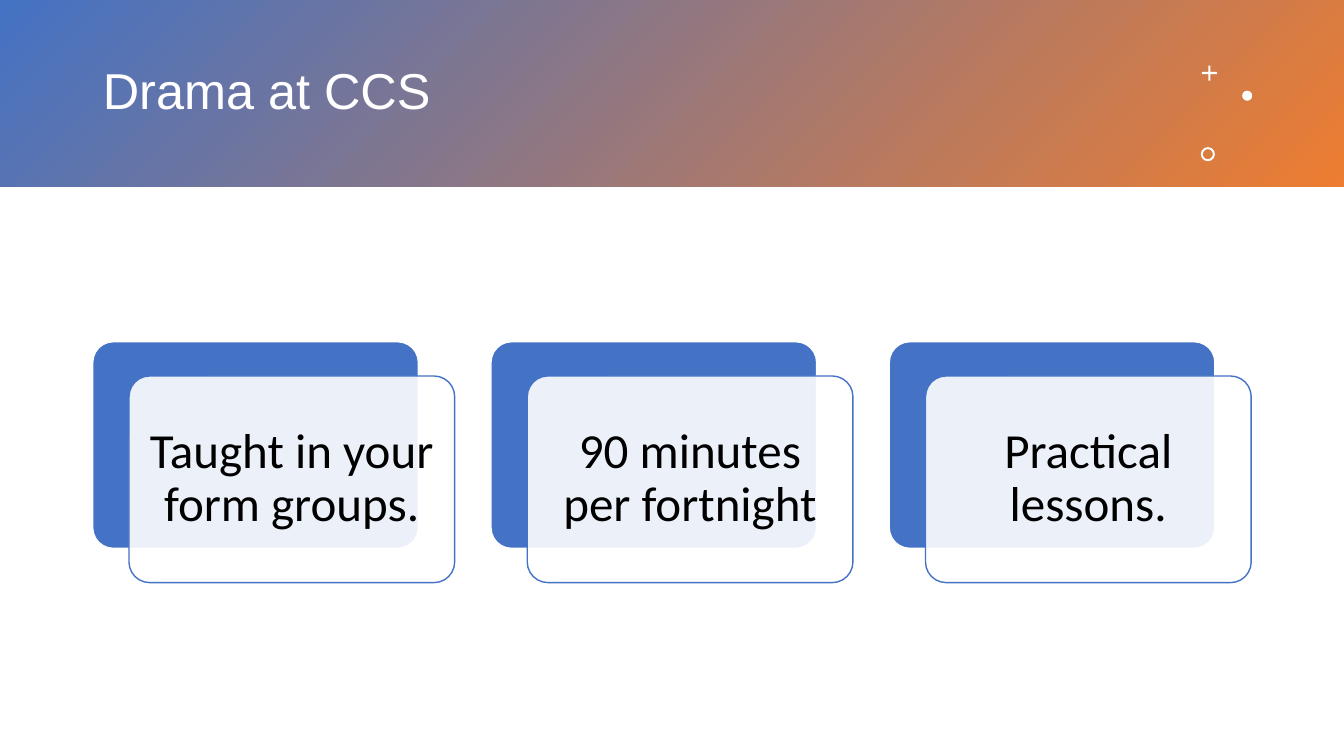
from dataclasses import dataclass

from lxml import etree
from pptx import Presentation
from pptx.dml.color import RGBColor
from pptx.enum.shapes import MSO_SHAPE
from pptx.enum.text import MSO_ANCHOR, PP_ALIGN
from pptx.oxml.ns import qn
from pptx.util import Emu, Pt

RECT, ROUND = MSO_SHAPE.RECTANGLE, MSO_SHAPE.ROUNDED_RECTANGLE
CROSS, OVAL, RING = MSO_SHAPE.CROSS, MSO_SHAPE.OVAL, MSO_SHAPE.DONUT
LEFT, CENTER, MIDDLE = PP_ALIGN.LEFT, PP_ALIGN.CENTER, MSO_ANCHOR.MIDDLE

COLORS = {"blue": "4472C4", "orange": "ED7D31", "white": "FFFFFF", "black": "000000"}
SCALE = 9144  # EMU in one px, 100 px to the inch


@dataclass
class Box:
    left: int
    top: int
    width: int
    height: int

    def emu(self) -> list[Emu]:
        return [px(n) for n in (self.left, self.top, self.width, self.height)]


@dataclass
class Mark:
    kind: MSO_SHAPE
    box: Box
    adjust: float | None = None


MARKS = [
    Mark(CROSS, Box(1192, 65, 15, 15), 0.43),
    Mark(OVAL, Box(1232, 90, 10, 10)),
    Mark(RING, Box(1191, 146, 14, 14), 0.14),
]
CARDS = ["Taught in your form groups.", "90 minutes per fortnight", "Practical lessons."]
FIRST = Box(92, 339, 323, 205)
STEP = 395
SHIFT_X, SHIFT_Y = 36, 34


def px(count: int) -> Emu:
    return Emu(count * SCALE)


def color(name: str) -> RGBColor:
    return RGBColor.from_string(COLORS[name])


def add_shape(slide, mark: Mark, fill: str, line: str | None = None):
    shape = slide.shapes.add_shape(mark.kind, *mark.box.emu())
    shape.shadow.inherit = False
    if mark.adjust is not None:
        shape.adjustments[0] = mark.adjust
    shape.fill.solid()
    shape.fill.fore_color.rgb = color(fill)
    if line:
        shape.line.color.rgb = color(line)
        shape.line.width = Pt(1)
    else:
        shape.line.fill.background()
    return shape


def set_text(shape, text: str, font: str, size: int, ink: str, align: PP_ALIGN) -> None:
    frame = shape.text_frame
    frame.word_wrap = True
    frame.vertical_anchor = MIDDLE
    frame.text = text
    para = frame.paragraphs[0]
    para.alignment = align
    para.line_spacing = 0.9
    para.font.name = font
    para.font.size = Pt(size)
    para.font.color.rgb = color(ink)


def add_header(slide) -> None:
    band = add_shape(slide, Mark(RECT, Box(0, 0, 1333, 185)), "blue")
    band.fill.gradient()
    band.fill.gradient_angle = 315
    for stop, name in zip(band.fill.gradient_stops, ("blue", "orange")):
        stop.color.rgb = color(name)
    title = slide.shapes.title
    title.left, title.top, title.width, title.height = Box(92, 33, 1075, 119).emu()
    set_text(title, "Drama at CCS", "Arial", 36, "white", LEFT)
    title.element.addprevious(band.element)  # band goes behind the title
    for mark in MARKS:
        add_shape(slide, mark, "white")


def add_card(slide, text: str, left: int) -> None:
    back = Box(left, FIRST.top, FIRST.width, FIRST.height)
    front = Box(left + SHIFT_X, FIRST.top + SHIFT_Y, FIRST.width, FIRST.height)
    add_shape(slide, Mark(ROUND, back, 0.1), "blue", "white")
    panel = add_shape(slide, Mark(ROUND, front, 0.1), "white", "blue")
    # Let the blue show through the panel
    tint = panel.element.spPr.find(qn("a:solidFill"))[0]
    etree.SubElement(tint, qn("a:alpha")).set("val", "90000")
    frame = panel.text_frame
    frame.margin_left = frame.margin_right = px(14)
    frame.margin_top = frame.margin_bottom = px(15)
    set_text(panel, text, "Calibri", 35, "black", CENTER)


def main() -> None:
    deck = Presentation()
    deck.slide_width, deck.slide_height = px(1333), px(750)
    slide = deck.slides.add_slide(deck.slide_layouts[5])
    add_header(slide)
    for index, text in enumerate(CARDS):
        add_card(slide, text, FIRST.left + index * STEP)
    deck.save("out.pptx")


if __name__ == "__main__":
    main()
